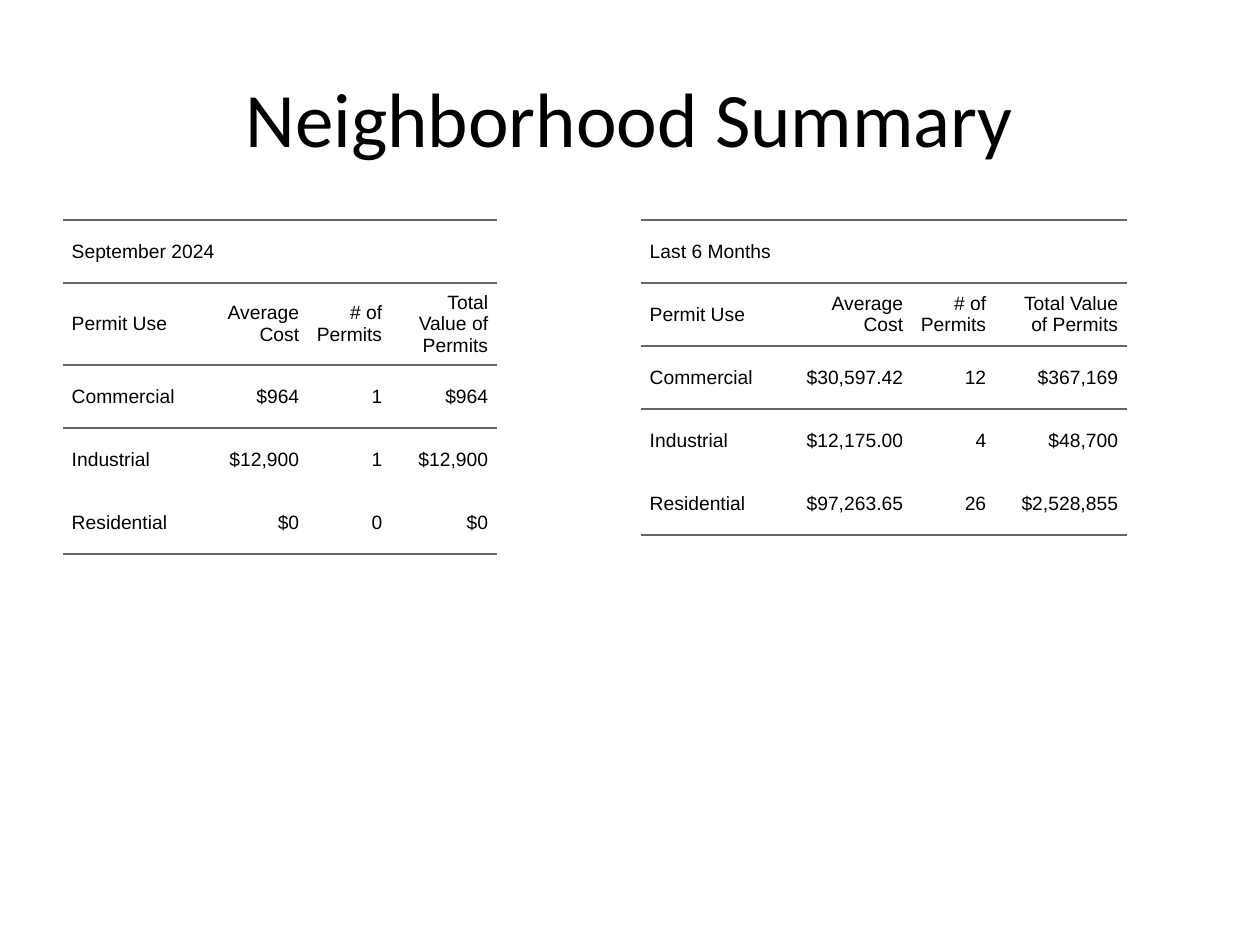
from lxml.etree import SubElement
from pptx import Presentation
from pptx.dml.color import RGBColor
from pptx.enum.text import MSO_ANCHOR, PP_ALIGN
from pptx.oxml import parse_xml
from pptx.oxml.ns import nsdecls, qn
from pptx.util import Emu, Pt

TITLE = "Neighborhood Summary"
HEADINGS = ["Permit Use", "Average Cost", "# of Permits", "Total Value of Permits"]
SUMMARIES = [
    {
        "period": "September 2024",
        "left": 63,
        "column_widths": [139, 106, 83, 106],
        "permits": [
            ["Commercial", "$964", "1", "$964"],
            ["Industrial", "$12,900", "1", "$12,900"],
            ["Residential", "$0", "0", "$0"],
        ],
    },
    {
        "period": "Last 6 Months",
        "left": 641,
        "column_widths": [139, 132, 83, 132],
        "permits": [
            ["Commercial", "$30,597.42", "12", "$367,169"],
            ["Industrial", "$12,175.00", "4", "$48,700"],
            ["Residential", "$97,263.65", "26", "$2,528,855"],
        ],
    },
]

BLACK = RGBColor(0x00, 0x00, 0x00)
RULE_GREY = RGBColor(0x66, 0x66, 0x66)
PLAIN_TABLE_STYLE = "{2D5ABB26-0587-4C30-8999-92F81FD0307C}"
TABLE_TOP = 220
ROW_HEIGHT = 63
CELL_PADDING = Pt(5)


def px(length):
    return Emu(round(length * 914400 / 126))


def add_title(slide):
    title = slide.shapes.add_textbox(px(63), px(38), px(1134), px(157))
    frame = title.text_frame
    frame.word_wrap = True
    frame.vertical_anchor = MSO_ANCHOR.MIDDLE
    frame.text = TITLE
    paragraph = frame.paragraphs[0]
    paragraph.alignment = PP_ALIGN.CENTER
    set_font(paragraph, "Calibri", 44)


def set_font(paragraph, name, size):
    paragraph.font.name = name
    paragraph.font.size = Pt(size)
    paragraph.font.color.rgb = BLACK


def add_rules(cell, sides):
    """Draw grey borders; the schema wants them ahead of the cell's fill."""
    properties = cell._tc.get_or_add_tcPr()
    for position, side in enumerate(sides):
        rule = parse_xml(f'<a:ln{side} {nsdecls("a")} w="{Pt(1.5)}"/>')
        fill = SubElement(rule, qn("a:solidFill"))
        SubElement(fill, qn("a:srgbClr"), val=str(RULE_GREY))
        properties.insert(position, rule)


def fill_cell(cell, text, alignment):
    cell.fill.background()
    cell.vertical_anchor = MSO_ANCHOR.MIDDLE
    cell.margin_left = cell.margin_right = 0
    cell.margin_top = cell.margin_bottom = CELL_PADDING
    cell.text = text
    paragraph = cell.text_frame.paragraphs[0]
    paragraph.alignment = alignment
    paragraph.space_before = paragraph.space_after = Pt(5)
    set_font(paragraph, "Arial", 11)
    indents = paragraph._p.get_or_add_pPr()
    for margin in ("marL", "marR"):
        indents.set(margin, str(CELL_PADDING))


def add_summary(slide, period, left, column_widths, permits):
    rows = [[period, "", "", ""], HEADINGS, *permits]
    rules_by_row = ["TB", "TB", "T"] + [""] * (len(rows) - 4) + ["B"]
    frame = slide.shapes.add_table(
        len(rows), len(HEADINGS), px(left), px(TABLE_TOP),
        px(sum(column_widths)), px(ROW_HEIGHT * len(rows)))
    table = frame.table
    table.first_row = table.horz_banding = False
    table._tbl.tblPr.find(qn("a:tableStyleId")).text = PLAIN_TABLE_STYLE
    for column, width in zip(table.columns, column_widths):
        column.width = px(width)
    for r, (texts, sides) in enumerate(zip(rows, rules_by_row)):
        table.rows[r].height = px(ROW_HEIGHT)
        for c, text in enumerate(texts):
            cell = table.cell(r, c)
            fill_cell(cell, text, PP_ALIGN.RIGHT if c else PP_ALIGN.LEFT)
            add_rules(cell, sides)
    table.cell(0, 0).merge(table.cell(0, len(HEADINGS) - 1))


def main():
    presentation = Presentation()
    presentation.slide_width, presentation.slide_height = px(1260), px(945)
    slide = presentation.slides.add_slide(presentation.slide_layouts[6])
    for summary in SUMMARIES:
        add_summary(slide, **summary)
    add_title(slide)
    presentation.save("out.pptx")


if __name__ == "__main__":
    main()
